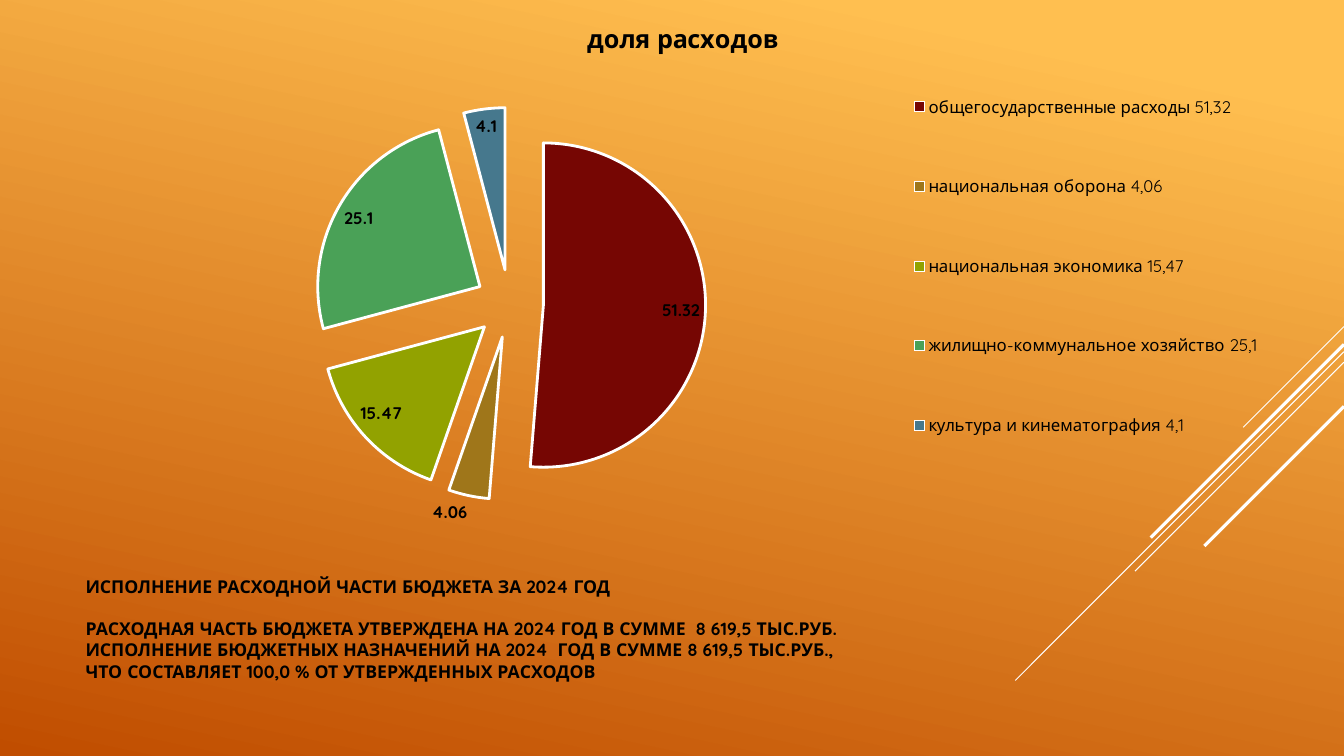
from lxml.etree import SubElement
from pptx import Presentation
from pptx.chart.data import CategoryChartData as Data
from pptx.dml.color import RGBColor as Rgb
from pptx.enum.chart import XL_CHART_TYPE as Kind
from pptx.enum.chart import XL_LABEL_POSITION as Spot
from pptx.enum.chart import XL_LEGEND_POSITION as Side
from pptx.enum.shapes import MSO_CONNECTOR as Link
from pptx.oxml import parse_xml
from pptx.oxml.ns import nsdecls, qn
from pptx.util import Pt

PX = 9525
FONT = "Quicksand"
HUES = {
    "light": "FFBF50", "dark": "C04D00", "line": "FFFFFF", "text": "000000",
    "state": "760603", "army": "9F761A", "trade": "92A200",
    "homes": "4AA157", "arts": "46788D",
}
COSTS = [
    ("общегосударственные расходы 51,32", 51.32, "state"),
    ("национальная оборона 4,06", 4.06, "army"),
    ("национальная экономика 15,47", 15.47, "trade"),
    ("жилищно-коммунальное хозяйство 25,1", 25.1, "homes"),
    ("культура и кинематография 4,1", 4.1, "arts"),
]
RAYS = [(0, 96, 0.75), (24, 313, 0.75), (34, 199, 0.75), (17, 184, 2.25), (76, 133, 2.25)]
LINES = [
    "ИСПОЛНЕНИЕ РАСХОДНОЙ ЧАСТИ БЮДЖЕТА ЗА 2024 ГОД",
    "РАСХОДНАЯ ЧАСТЬ БЮДЖЕТА УТВЕРЖДЕНА НА 2024 ГОД В СУММЕ  8 619,5 ТЫС.РУБ.",
    "ИСПОЛНЕНИЕ БЮДЖЕТНЫХ НАЗНАЧЕНИЙ НА 2024  ГОД В СУММЕ 8 619,5 ТЫС.РУБ.,",
    "ЧТО СОСТАВЛЯЕТ 100,0 % ОТ УТВЕРЖДЕННЫХ РАСХОДОВ",
]


def hue(name):
    return Rgb.from_string(HUES[name])


def style(font, size, bold=False):
    font.name = FONT
    font.size = Pt(size)
    font.bold = bold
    font.color.rgb = hue("text")


def paint(slide):
    fill = slide.background.fill
    fill.gradient()
    fill.gradient_angle = 258
    for stop, name, place in zip(fill.gradient_stops, ("light", "dark"), (0.1, 1)):
        stop.color.rgb = hue(name)
        stop.position = place


def draw_rays(slide, right, top):
    for drop, run, width in RAYS:
        y = top + drop
        ray = slide.shapes.add_connector(
            Link.STRAIGHT, right * PX, y * PX, (right - run) * PX, (y + run) * PX)
        ray.line.color.rgb = hue("line")
        ray.line.width = Pt(width)
        SubElement(ray._element.spPr, qn("a:effectLst"))


def draw_text(slide, x, y, w, h):
    frame = slide.shapes.add_textbox(x * PX, y * PX, w * PX, h * PX).text_frame
    frame.word_wrap = True
    frame.margin_top = 0
    for i, line in enumerate(LINES):
        para = frame.add_paragraph() if i else frame.paragraphs[0]
        para.text = line
        para.line_spacing = Pt(15.2)
        para.space_before = Pt(15.2 if i == 1 else 0)
        style(para.font, 12.6, True)


def layout(x, y, w, h, inner=False):
    target = '<c:layoutTarget val="inner"/>' if inner else ""
    modes = '<c:xMode val="edge"/><c:yMode val="edge"/>'
    sizes = "".join(f'<c:{k} val="{v}"/>' for k, v in zip("xywh", (x, y, w, h)))
    return parse_xml(f'<c:layout {nsdecls("c")}><c:manualLayout>{target}{modes}{sizes}'
                     '</c:manualLayout></c:layout>')


def place(area, box):
    for old in area.findall(qn("c:layout")):
        area.remove(old)
    pos = area.find(qn("c:legendPos"))
    if pos is None:
        area.insert(0, box)
    else:
        pos.addnext(box)


def draw_pie(slide, x, y, w, h):
    data = Data()
    data.categories = [cost[0] for cost in COSTS]
    data.add_series("доля расходов", [cost[1] for cost in COSTS])
    chart = slide.shapes.add_chart(
        Kind.PIE_EXPLODED, x * PX, y * PX, w * PX, h * PX, data).chart
    style(chart.font, 10)
    chart.has_title = True
    head = chart.chart_title.text_frame.paragraphs[0]
    head.text = "доля расходов"
    style(head.font, 18, True)
    chart.chart_title.include_in_layout = False

    chart.has_legend = True
    key = chart.legend
    key.position = Side.RIGHT
    key.include_in_layout = False
    style(key.font, 12)
    place(key._element, layout(0.67, 0.07, 0.31, 0.85))

    plot = chart.plots[0]
    plot.vary_by_categories = True
    root = chart._chartSpace
    place(root.xpath(".//c:plotArea")[0], layout(0.2, 0.2, 0.32, 0.73, True))
    root.xpath(".//c:explosion")[0].set("val", "21")
    for i, cost in enumerate(COSTS):
        part = plot.series[0].points[i].format
        part.fill.solid()
        part.fill.fore_color.rgb = hue(cost[2])
        part.line.color.rgb = hue("line")
        part.line.width = Pt(2)

    plot.has_data_labels = True
    tags = plot.data_labels
    tags.show_value = True
    tags.show_percentage = False
    tags.position = Spot.BEST_FIT
    style(tags.font, 12, True)


def main():
    deck = Presentation()
    deck.slide_width = 1280 * PX
    deck.slide_height = 720 * PX
    slide = deck.slides.add_slide(deck.slide_layouts[6])
    paint(slide)
    draw_rays(slide, 1280, 311)
    draw_text(slide, 72, 548, 896, 143)
    draw_pie(slide, 60, 0, 1181, 512)
    deck.save("out.pptx")


if __name__ == "__main__":
    main()
